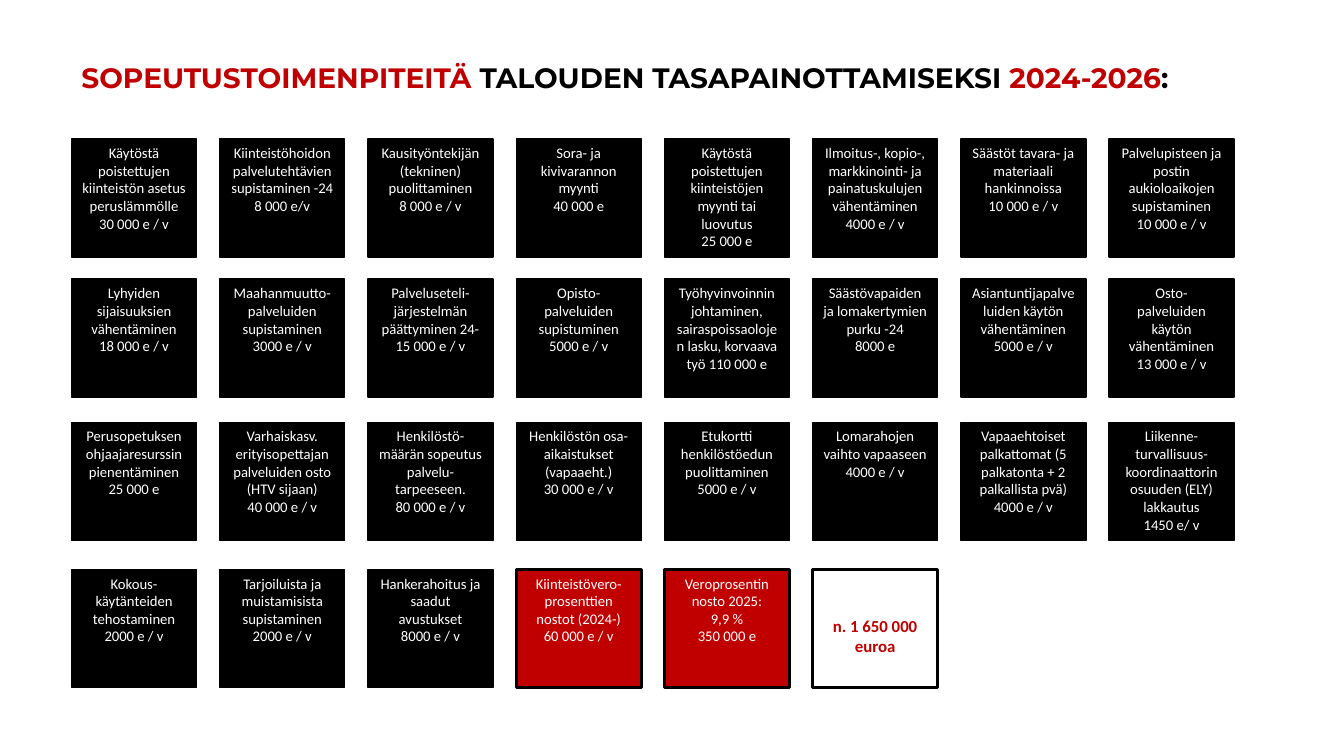
"""Build the slide of budget measures for 2024-2026."""
import pptx
import pptx.util
import pptx.dml.color
import pptx.enum.shapes
import pptx.enum.text

HUES = {"black": "000000", "red": "C00000", "white": "FFFFFF"}
TITLE = [
    ("SOPEUTUSTOIMENPITEITÄ", "red"),
    (" TALOUDEN TASAPAINOTTAMISEKSI ", "black"),
    ("2024-2026", "red"),
    (":", "black"),
]
ROWS = [
    [
        "Käytöstä poistettujen kiinteistön asetus peruslämmölle\n30 000 e / v",
        "Kiinteistöhoidon palvelutehtävien supistaminen -24\n8 000 e/v",
        "Kausityöntekijän (tekninen) puolittaminen\n8 000 e / v",
        "Sora- ja kivivarannon myynti\n40 000 e",
        "Käytöstä poistettujen kiinteistöjen myynti tai luovutus\n25 000 e",
        "Ilmoitus-, kopio-, markkinointi- ja painatuskulujen vähentäminen\n4000 e / v",
        "Säästöt tavara- ja materiaali hankinnoissa\n10 000 e / v",
        "Palvelupisteen ja postin aukioloaikojen supistaminen\n10 000 e / v",
    ],
    [
        "Lyhyiden sijaisuuksien vähentäminen\n18 000 e / v",
        "Maahanmuutto-palveluiden supistaminen\n3000 e / v",
        "Palveluseteli-järjestelmän päättyminen 24-\n15 000 e / v",
        "Opisto-palveluiden supistuminen\n5000 e / v",
        "Työhyvinvoinnin johtaminen, sairaspoissaolojen lasku, korvaava työ 110 000 e",
        "Säästövapaiden ja lomakertymien\npurku -24\n8000 e",
        "Asiantuntijapalveluiden käytön vähentäminen\n5000 e / v",
        "Osto-\npalveluiden käytön vähentäminen\n13 000 e / v",
    ],
    [
        "Perusopetuksen ohjaajaresurssin pienentäminen\n25 000 e",
        "Varhaiskasv.\nerityisopettajan palveluiden osto (HTV sijaan)\n40 000 e / v",
        "Henkilöstö-määrän sopeutus palvelu-tarpeeseen.\n80 000 e / v",
        "Henkilöstön osa-aikaistukset (vapaaeht.)\n30 000 e / v",
        "Etukortti henkilöstöedun puolittaminen\n5000 e / v",
        "Lomarahojen vaihto vapaaseen\n4000 e / v",
        "Vapaaehtoiset palkattomat (5 palkatonta + 2 palkallista pvä)\n4000 e / v",
        "Liikenne-turvallisuus-koordinaattorin osuuden (ELY) lakkautus\n1450 e/ v",
    ],
    [
        "Kokous-käytänteiden tehostaminen\n2000 e / v",
        "Tarjoiluista ja muistamisista supistaminen\n2000 e / v",
        "Hankerahoitus ja saadut avustukset\n8000 e / v",
        "Kiinteistövero-prosenttien nostot (2024-)\n60 000 e / v",
        "Veroprosentin nosto 2025:\n9,9 %\n350 000 e",
        "n. 1 650 000 euroa",
    ],
]
PLAIN = dict(fill="black", ink="white", edge=1, size=10.5, bold=False, inset=0.05)
TAX = PLAIN | dict(fill="red", edge=2.25)
TOTAL = dict(fill="white", ink="red", edge=2.25, size=12, bold=True, inset=0.46)
STYLES = {(3, 3): TAX, (3, 4): TAX, (3, 5): TOTAL}
LEFT, PITCH = 0.71, 1.47
TOPS = [1.38, 2.77, 4.19, 5.65]
WIDE, HIGH = 1.24, 1.17

Inch, Pt = pptx.util.Inches, pptx.util.Pt


def hue(name):
    return pptx.dml.color.RGBColor.from_string(HUES[name])


def set_font(font, face, size, ink, bold):
    font.name, font.size, font.bold = face, Pt(size), bold
    font.color.rgb = hue(ink)


def add_title(slide):
    box = slide.shapes.add_textbox(Inch(LEFT), Inch(0.55), Inch(12.16), Inch(0.44))
    box.text_frame.word_wrap = True
    for text, ink in TITLE:
        run = box.text_frame.paragraphs[0].add_run()
        run.text = text
        set_font(run.font, "Montserrat", 20, ink, True)


def add_card(slide, row, col, text):
    look = STYLES.get((row, col), PLAIN)
    card = slide.shapes.add_shape(
        pptx.enum.shapes.MSO_SHAPE.RECTANGLE,
        Inch(LEFT + col * PITCH), Inch(TOPS[row]), Inch(WIDE), Inch(HIGH))
    card.shadow.inherit = False
    card.fill.solid()
    card.fill.fore_color.rgb = hue(look["fill"])
    card.line.color.rgb = hue("black")
    card.line.width = Pt(look["edge"])
    frame = card.text_frame
    frame.word_wrap = True
    frame.vertical_anchor = pptx.enum.text.MSO_ANCHOR.TOP
    frame.margin_top = Inch(look["inset"])
    frame.text = text
    for para in frame.paragraphs:
        para.alignment = pptx.enum.text.PP_ALIGN.CENTER
        for run in para.runs:
            set_font(run.font, "Calibri", look["size"], look["ink"], look["bold"])


def main():
    deck = pptx.Presentation()
    deck.slide_width, deck.slide_height = Inch(13.33), Inch(7.5)
    slide = deck.slides.add_slide(deck.slide_layouts[6])
    add_title(slide)
    for row, texts in enumerate(ROWS):
        for col, text in enumerate(texts):
            add_card(slide, row, col, text)
    deck.save("out.pptx")


if __name__ == "__main__":
    main()
